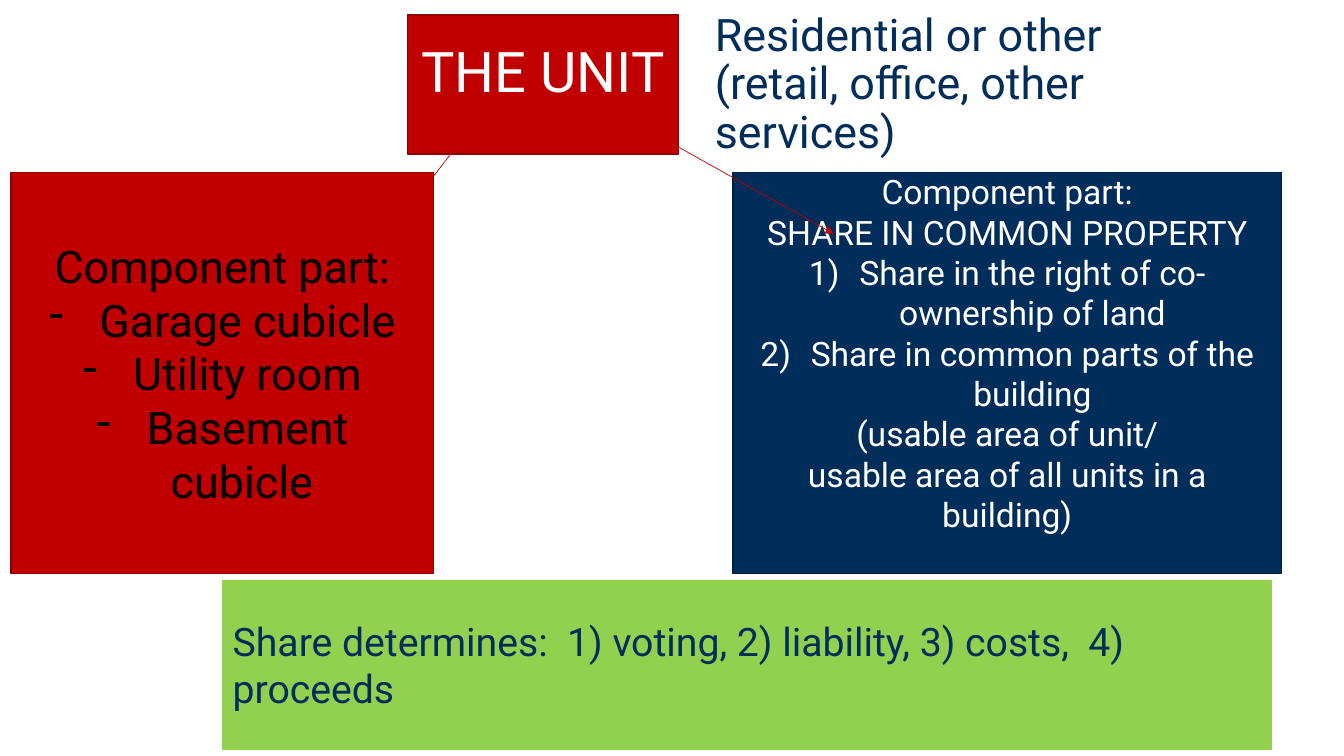
import pptx
import pptx.util
import pptx.dml.color
import pptx.enum.shapes
import pptx.enum.text
import pptx.oxml.ns
from lxml import etree

Inches, Pt = pptx.util.Inches, pptx.util.Pt
ALIGN = pptx.enum.text.PP_ALIGN
WIDTH, HEIGHT = 13.33, 7.5
FONT = "Roboto"
RED, NAVY, GREEN, WHITE, BLACK = "C00000", "002D59", "92D050", "FFFFFF", "000000"
PARTS_TOP, PARTS_HEIGHT = 1.71, 3.98

# Content: each paragraph is (text, bullet), bullet being None, a dash or a numbering scheme
DASH, NUMBER = "-", "arabicParenR"
TITLE = "Residential or other \v(retail, office, other services)"
UNIT = [("THE UNIT", None)]
ROOMS = [
    ("Component part:", None),
    ("Garage cubicle", DASH),
    ("Utility room", DASH),
    ("Basement cubicle ", DASH),
]
COMMON_PROPERTY = [
    ("Component part:", None),
    ("SHARE IN COMMON PROPERTY", None),
    ("Share in the right of co-ownership of land", NUMBER),
    ("Share in common parts of the building", NUMBER),
    ("(usable area of unit/", None),
    ("usable area of all units in a building)", None),
]
SHARE = [("Share determines:  1) voting, 2) liability, 3) costs,  4) proceeds", None)]

# (left, top, width, height), fill, line, text colour, size, alignment, bottom inset, paragraphs
BOXES = [
    ((4.04, 0.15, 2.69, 1.38), RED, "8E0000", WHITE, 40, ALIGN.CENTER, 0.34, UNIT),
    ((0.11, PARTS_TOP, 4.19, PARTS_HEIGHT), RED, "8E0000", BLACK, 32, ALIGN.CENTER, 0.05, ROOMS),
    ((7.27, PARTS_TOP, 5.44, PARTS_HEIGHT), NAVY, "002142", WHITE, 24, ALIGN.CENTER, 0.45,
     COMMON_PROPERTY),
    ((2.21, 5.76, 10.4, 1.67), GREEN, GREEN, NAVY, 28, ALIGN.LEFT, 0.05, SHARE),
]
ARROWS = [(4.47, 1.53, 3.8, 2.39), (6.73, 1.46, 8.27, 2.32)]


def color(hex_string):
    return pptx.dml.color.RGBColor.from_string(hex_string)


def add_element(parent, tag, **attributes):
    return etree.SubElement(parent, pptx.oxml.ns.qn(tag), attributes)


def set_bullet(para, bullet):
    properties = para._p.get_or_add_pPr()
    properties.set("marL", str(Inches(0.5)))
    properties.set("indent", str(Inches(-0.5)))
    if bullet == DASH:
        add_element(properties, "a:buFontTx")
        add_element(properties, "a:buChar", char=bullet)
    else:
        add_element(properties, "a:buAutoNum", type=bullet)


def format_runs(para, size, text_color):
    for span in para.runs:
        span.font.name = FONT
        span.font.size = Pt(size)
        span.font.color.rgb = color(text_color)


def set_frame(frame, bottom_inset):
    frame.word_wrap = True
    frame.auto_size = pptx.enum.text.MSO_AUTO_SIZE.NONE
    frame.vertical_anchor = pptx.enum.text.MSO_ANCHOR.MIDDLE
    frame.margin_bottom = Inches(bottom_inset)


def add_box(page, place, fill, line, text_color, size, align, bottom_inset, paragraphs):
    box = page.shapes.add_shape(pptx.enum.shapes.MSO_SHAPE.RECTANGLE, *map(Inches, place))
    box.shadow.inherit = False
    box.fill.solid()
    box.fill.fore_color.rgb = color(fill)
    box.line.color.rgb = color(line)
    box.line.width = Pt(1)
    frame = box.text_frame
    set_frame(frame, bottom_inset)
    frame.text = "\n".join(text for text, bullet in paragraphs)
    for para, (text, bullet) in zip(frame.paragraphs, paragraphs):
        para.alignment = align
        if bullet:
            set_bullet(para, bullet)
        format_runs(para, size, text_color)


def add_arrow(page, ends):
    arrow = page.shapes.add_connector(
        pptx.enum.shapes.MSO_CONNECTOR.STRAIGHT, *map(Inches, ends))
    arrow.line.color.rgb = color(RED)
    arrow.line.width = Pt(0.5)
    add_element(arrow.line._get_or_add_ln(), "a:tailEnd", type="triangle")
    add_element(arrow._element.spPr, "a:effectLst")


def main():
    deck = pptx.Presentation()
    deck.slide_width, deck.slide_height = Inches(WIDTH), Inches(HEIGHT)
    page = deck.slides.add_slide(deck.slide_layouts.get_by_name("Title Only"))

    # Title beside the unit
    title = page.shapes.title
    title.left, title.top, title.width, title.height = map(Inches, (6.99, 0.45, 5.72, 1.26))
    set_frame(title.text_frame, 0.52)
    title.text_frame.text = TITLE
    para = title.text_frame.paragraphs[0]
    para.alignment = ALIGN.LEFT
    para.line_spacing = 0.9
    format_runs(para, 32, NAVY)

    # Unit, its component parts and the share
    for box in BOXES:
        add_box(page, *box)

    # Arrows from the unit to its parts
    for ends in ARROWS:
        add_arrow(page, ends)

    deck.save("out.pptx")


if __name__ == "__main__":
    main()
